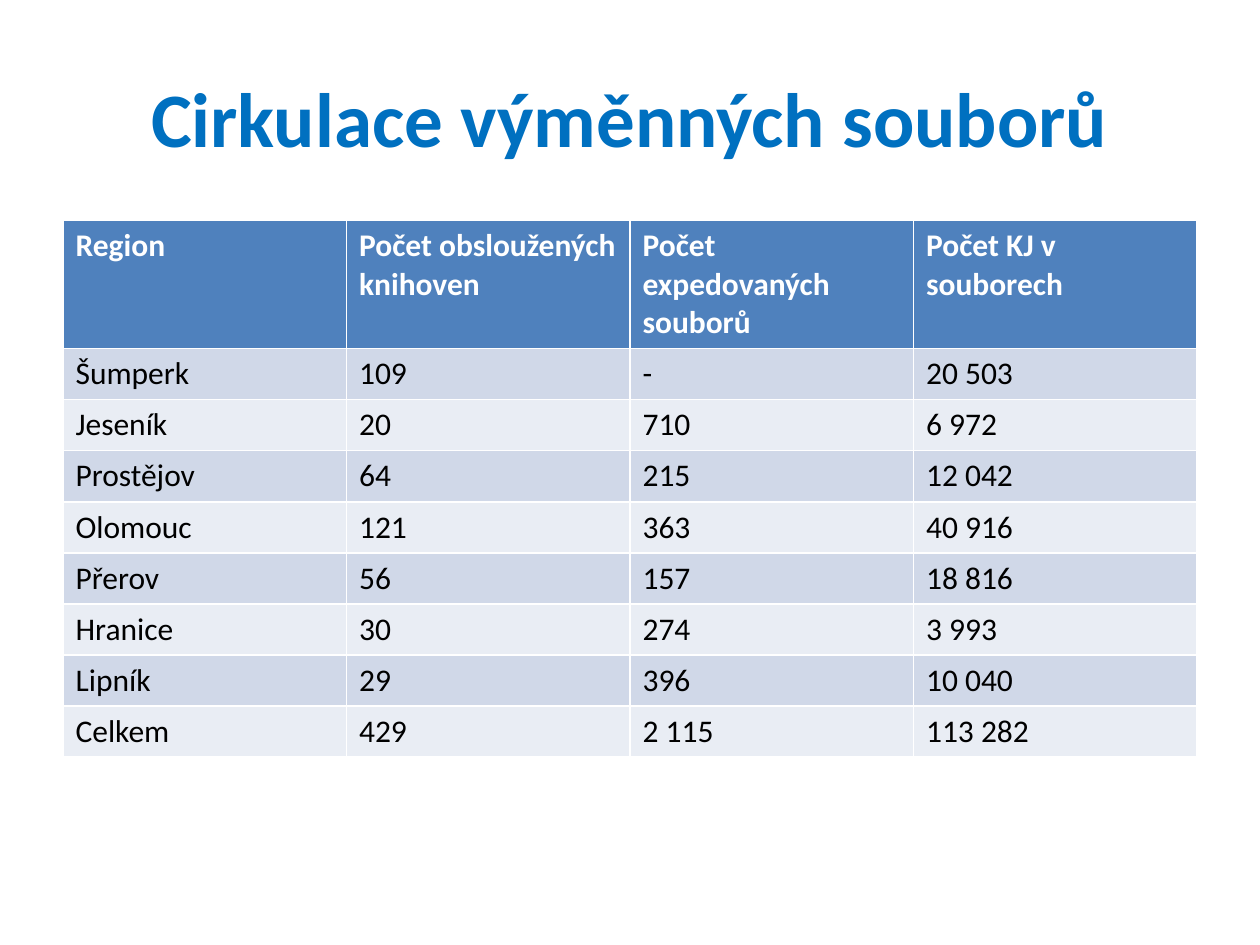
"""Build a slide with a table of exchange-set circulation by region."""
from dataclasses import dataclass

from pptx import Presentation
from pptx.dml.color import RGBColor as Rgb
from pptx.enum.text import MSO_ANCHOR as Anchor, PP_ALIGN as Align
from pptx.slide import Slide
from pptx.table import _Cell as Cell
from pptx.util import Emu, Pt

EMU_PER_PX = 4572


@dataclass(frozen=True)
class Theme:
    font: str = "Calibri"
    title_size: int = 44
    table_size: int = 18
    title: str = "0070C0"
    header_text: str = "FFFFFF"
    header_fill: str = "4F81BD"
    body_text: str = "000000"
    bands: tuple[str, str] = ("D0D8E8", "E9EDF4")


@dataclass(frozen=True)
class Region:
    name: str
    libraries: str
    sets: str
    units: str

    def values(self) -> tuple[str, ...]:
        return self.name, self.libraries, self.sets, self.units


THEME = Theme()
HEADINGS = (
    "Region",
    "Počet obsloužených knihoven",
    "Počet expedovaných souborů",
    "Počet KJ v souborech",
)
REGIONS = (
    Region("Šumperk", "109", "-", "20 503"),
    Region("Jeseník", "20", "710", "6 972"),
    Region("Prostějov", "64", "215", "12 042"),
    Region("Olomouc", "121", "363", "40 916"),
    Region("Přerov", "56", "157", "18 816"),
    Region("Hranice", "30", "274", "3 993"),
    Region("Lipník", "29", "396", "10 040"),
    Region("Celkem", "429", "2 115", "113 282"),
)


def px(length: int) -> Emu:
    return Emu(length * EMU_PER_PX)


def set_font(paragraph, size: int, color: str, bold: bool) -> None:
    font = paragraph.font
    font.name, font.size, font.bold = THEME.font, Pt(size), bold
    font.color.rgb = Rgb.from_string(color)


def add_heading(slide: Slide, text: str) -> None:
    heading = slide.shapes.title
    heading.left, heading.top = px(100), px(60)
    heading.width, heading.height = px(1800), px(250)
    heading.text_frame.text = text
    heading.text_frame.vertical_anchor = Anchor.MIDDLE
    paragraph = heading.text_frame.paragraphs[0]
    paragraph.alignment = Align.CENTER
    set_font(paragraph, THEME.title_size, THEME.title, True)


def fill_cell(cell: Cell, text: str, fill: str, color: str, bold: bool) -> None:
    cell.text = text
    cell.fill.solid()
    cell.fill.fore_color.rgb = Rgb.from_string(fill)
    set_font(cell.text_frame.paragraphs[0], THEME.table_size, color, bold)


def add_circulation(slide: Slide, regions: tuple[Region, ...]) -> None:
    rows = (HEADINGS, *(region.values() for region in regions))
    row_height = 81
    circulation = slide.shapes.add_table(
        len(rows), len(HEADINGS),
        px(100), px(350), px(1800), px(row_height * len(rows)),
    ).table
    for index, values in enumerate(rows):
        is_header = index == 0
        fill = THEME.header_fill if is_header else THEME.bands[(index - 1) % 2]
        color = THEME.header_text if is_header else THEME.body_text
        for column, value in enumerate(values):
            fill_cell(circulation.cell(index, column), value, fill, color, is_header)


def main() -> None:
    deck = Presentation()
    deck.slide_width, deck.slide_height = px(2000), px(1500)
    slide = deck.slides.add_slide(deck.slide_layouts[5])
    add_heading(slide, "Cirkulace výměnných souborů")
    add_circulation(slide, REGIONS)
    deck.save("out.pptx")


if __name__ == "__main__":
    main()
